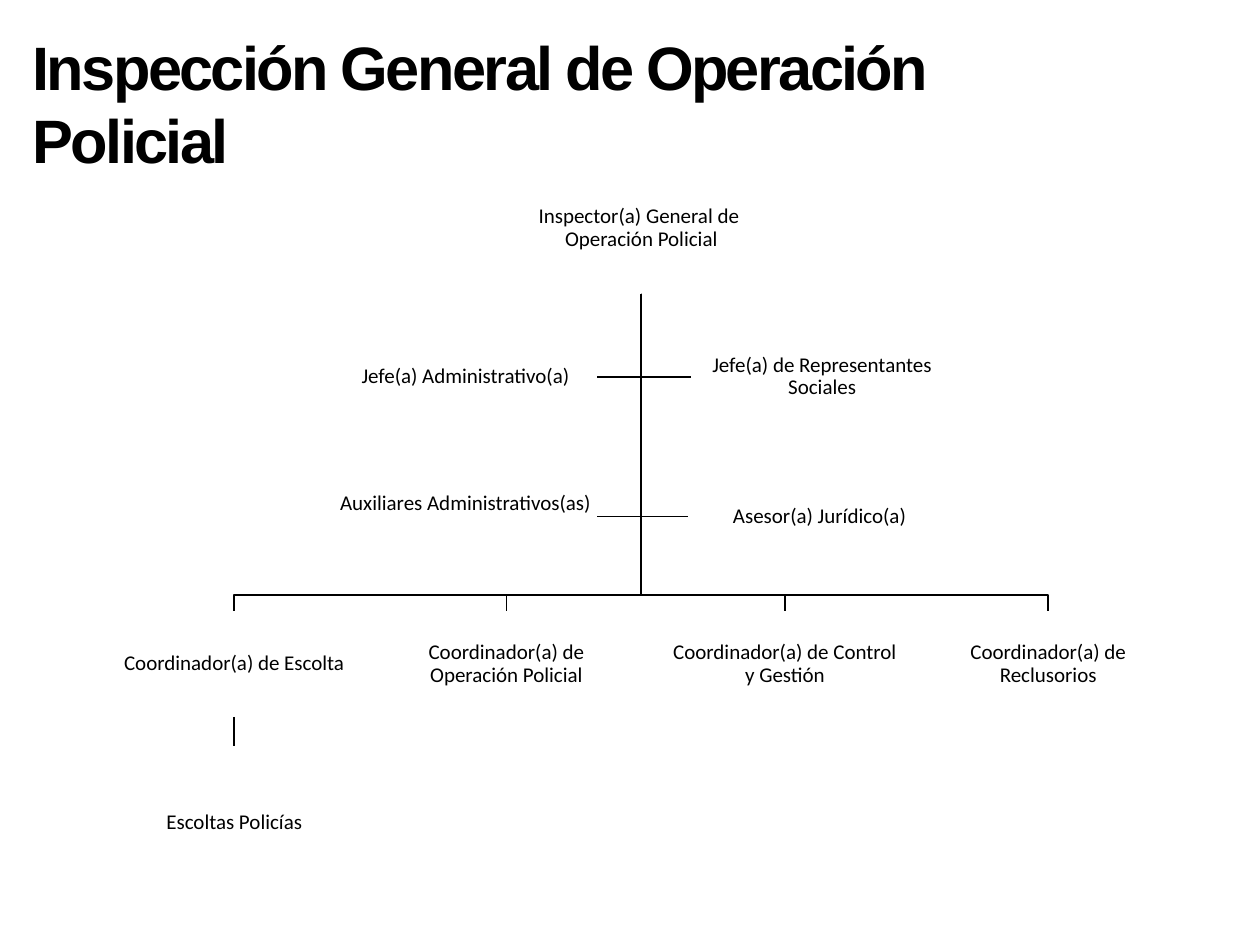
import pptx
import pptx.dml.color
import pptx.enum.shapes
import pptx.enum.text
import pptx.oxml
import pptx.util
from pptx.util import Inches

THEME = {
    "ink": pptx.dml.color.RGBColor(0, 0, 0),
    "paper": pptx.dml.color.RGBColor(255, 255, 255),
    "title_font": "Arial",
    "title_size": 35,
    "title_spacing": -150,
    "box_font": "Calibri",
    "box_size": 12,
    "line_width": 1,
}

TITLE = "Inspección General de Operación Policial"
DIRECTOR = "Inspector(a) General de \vOperación Policial"
# Text, left, top, bottom inset
LEFT_STAFF = [
    ("Jefe(a) Administrativo(a)", 2.65, 2.57, 0.01),
    ("Auxiliares Administrativos(as)", 2.65, 3.68, 0.21),
]
RIGHT_STAFF = [
    ("Jefe(a) de Representantes Sociales", 5.48, 2.57, 0.01),
    ("Asesor(a) Jurídico(a)", 5.46, 3.68, 0.01),
]
COORDINATORS = [
    ("Coordinador(a) de Escolta", 0.93),
    ("Coordinador(a) de Operación Policial", 3.09),
    ("Coordinador(a) de Control y Gestión", 5.3),
    ("Coordinador(a) de Reclusorios", 7.39),
]
ESCORTS = "Escoltas Policías"

STAFF_WIDTH, UNIT_WIDTH, BOX_HEIGHT = 2.09, 1.86, 0.84
UNIT_TOP, BUS_Y = 4.85, 4.72
TOP, BOTTOM = 0, 2


def format_text(paragraph, font_name, size, bold=False):
    for run in paragraph.runs:
        run.font.name = font_name
        run.font.size = pptx.util.Pt(size)
        run.font.bold = bold
        run.font.color.rgb = THEME["ink"]


def add_title(slide):
    box = slide.shapes.add_textbox(Inches(0.16), Inches(0.18), Inches(7.46), Inches(1.28))
    frame = box.text_frame
    frame.word_wrap = True
    frame.auto_size = pptx.enum.text.MSO_AUTO_SIZE.SHAPE_TO_FIT_TEXT
    frame.text = TITLE
    paragraph = frame.paragraphs[0]
    format_text(paragraph, THEME["title_font"], THEME["title_size"], bold=True)
    for run in paragraph.runs:
        run.font._element.set("spc", str(THEME["title_spacing"]))


def add_box(slide, text, left, top, width, height=BOX_HEIGHT, bottom_inset=0.01, filled=True):
    shape = slide.shapes.add_shape(
        pptx.enum.shapes.MSO_SHAPE.RECTANGLE,
        Inches(left), Inches(top), Inches(width), Inches(height),
    )
    shape.shadow.inherit = False
    shape.line.fill.background()
    if filled:
        shape.fill.solid()
        shape.fill.fore_color.rgb = THEME["paper"]
    else:
        shape.fill.background()
    frame = shape.text_frame
    frame.word_wrap = True
    frame.vertical_anchor = pptx.enum.text.MSO_ANCHOR.MIDDLE
    frame.margin_left = frame.margin_right = frame.margin_top = Inches(0.01)
    frame.margin_bottom = Inches(bottom_inset)
    frame.text = text
    paragraph = frame.paragraphs[0]
    paragraph.alignment = pptx.enum.text.PP_ALIGN.CENTER
    paragraph.line_spacing = 0.9
    format_text(paragraph, THEME["box_font"], THEME["box_size"])
    return shape


def style_line(shape):
    shape.line.color.rgb = THEME["ink"]
    shape.line.width = pptx.util.Pt(THEME["line_width"])


def add_branch(slide, start, *corners):
    """Draw an open bent line from start through the corners."""
    builder = slide.shapes.build_freeform(*start)
    builder.add_line_segments(corners, close=False)
    branch = builder.convert_to_shape()
    branch.shadow.inherit = False
    branch.fill.background()
    style_line(branch)


def add_joint(slide, upper, lower):
    """Connect the bottom of the upper box to the top of the lower one."""
    connector = slide.shapes.add_connector(
        pptx.enum.shapes.MSO_CONNECTOR.STRAIGHT, 0, 0, 0, 0
    )
    style_line(connector)
    connector._element.spPr.append(pptx.oxml.parse_xml(
        '<a:effectLst xmlns:a="http://schemas.openxmlformats.org/drawingml/2006/main"/>'
    ))
    connector.begin_connect(upper, BOTTOM)
    connector.end_connect(lower, TOP)


def center_x(shape):
    return shape.left + shape.width // 2


def add_organization(slide):
    director = add_box(slide, DIRECTOR, 4.03, 1.29, 2.12, 1.04, filled=False)
    trunk_x, bus_y = center_x(director), Inches(BUS_Y)
    start = (trunk_x, director.top + director.height)

    for staff, edge_offset in ((LEFT_STAFF, STAFF_WIDTH), (RIGHT_STAFF, 0)):
        for text, left, top, inset in staff:
            box = add_box(slide, text, left, top, STAFF_WIDTH, bottom_inset=inset)
            y = box.top + box.height // 2
            add_branch(slide, start, (trunk_x, y), (box.left + Inches(edge_offset), y))

    units = [add_box(slide, text, left, UNIT_TOP, UNIT_WIDTH) for text, left in COORDINATORS]
    for unit in units:
        x = center_x(unit)
        add_branch(slide, start, (trunk_x, bus_y), (x, bus_y), (x, unit.top))

    escorts = add_box(slide, ESCORTS, COORDINATORS[0][1], 5.92, UNIT_WIDTH, 1.22)
    add_joint(slide, units[0], escorts)


def main():
    presentation = pptx.Presentation()
    presentation.slide_width = Inches(10)
    presentation.slide_height = Inches(7.5)
    slide = presentation.slides.add_slide(presentation.slide_layouts[6])
    add_organization(slide)
    add_title(slide)
    presentation.save("out.pptx")


if __name__ == "__main__":
    main()
